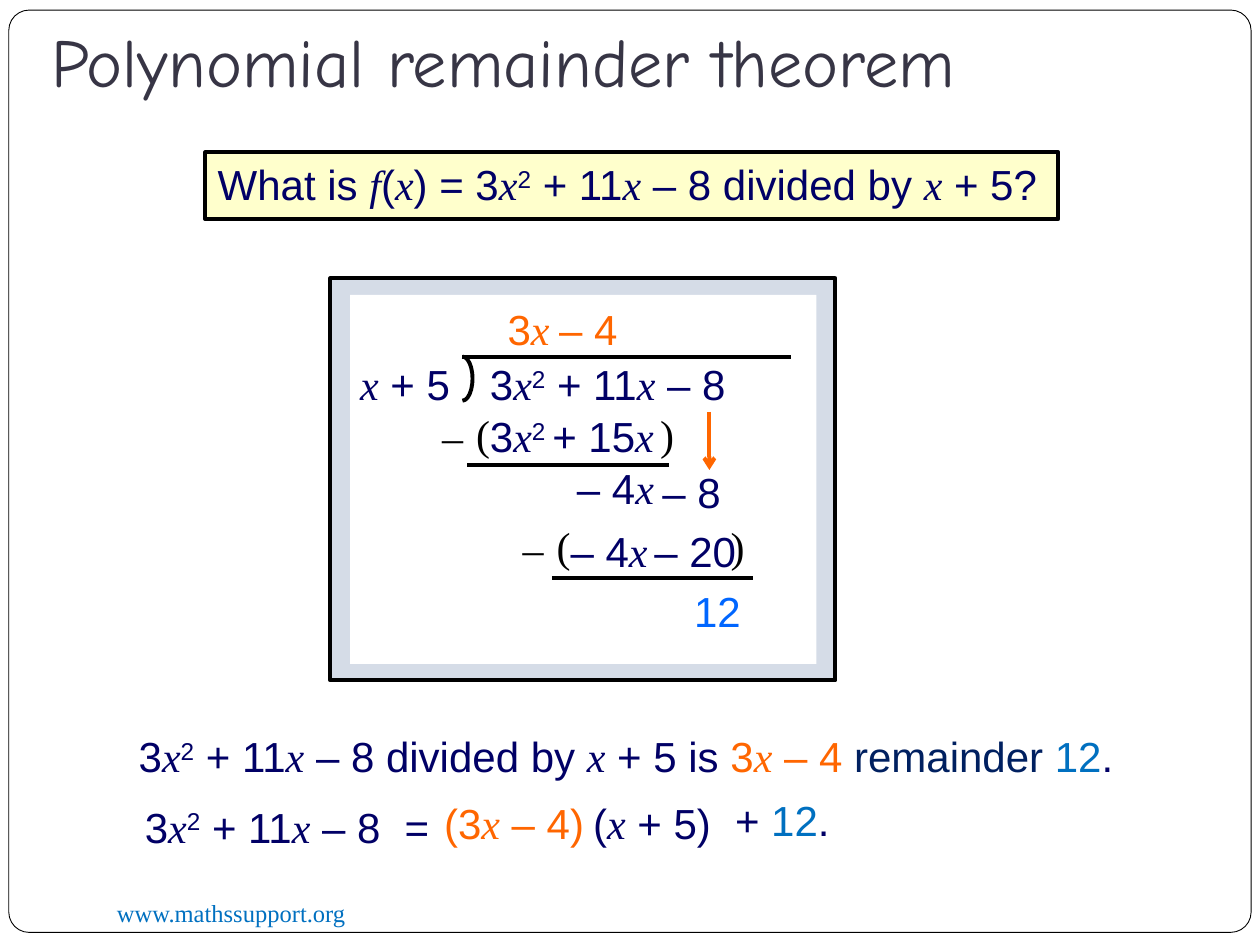
from dataclasses import dataclass
from itertools import groupby

from lxml import etree
from pptx import Presentation
from pptx.dml.color import RGBColor
from pptx.enum.shapes import MSO_CONNECTOR, MSO_SHAPE
from pptx.enum.text import MSO_ANCHOR, MSO_AUTO_SIZE, PP_ALIGN
from pptx.oxml.ns import qn
from pptx.util import Inches, Pt

STRAIGHT = MSO_CONNECTOR.STRAIGHT
RECT = MSO_SHAPE.RECTANGLE
ROUND = MSO_SHAPE.ROUNDED_RECTANGLE
BRACKET = MSO_SHAPE.RIGHT_BRACKET
TOP, BOTTOM = MSO_ANCHOR.TOP, MSO_ANCHOR.BOTTOM
LEFT, CENTER = PP_ALIGN.LEFT, PP_ALIGN.CENTER
GROW, FIXED = MSO_AUTO_SIZE.SHAPE_TO_FIT_TEXT, MSO_AUTO_SIZE.NONE


@dataclass(frozen=True)
class Theme:
    navy: str = "010066"
    orange: str = "FF6600"
    blue: str = "0066FF"
    sky: str = "0070C0"
    dark: str = "002060"
    slate: str = "373545"
    black: str = "000000"
    white: str = "FFFFFF"
    cream: str = "FFFFCC"
    frame: str = "D5DCE7"
    sans: str = "Arial"
    serif: str = "Times New Roman"
    hand: str = "Comic Neue"
    body: float = 24
    title: float = 39
    footer: float = 14
    rule: float = 2.25
    hairline: float = 0.5


class Builder:
    def __init__(self, slide, theme):
        self.s = slide
        self.t = theme

    def shape(self, kind, x, y, w, h, fill=None, line=None, width=None, adj=None):
        sp = self.s.shapes.add_shape(kind, Inches(x), Inches(y), Inches(w), Inches(h))
        sp.shadow.inherit = False
        if adj is not None:
            sp.adjustments[0] = adj
        if fill:
            sp.fill.solid()
            sp.fill.fore_color.rgb = RGBColor.from_string(fill)
        else:
            sp.fill.background()
        if line:
            sp.line.color.rgb = RGBColor.from_string(line)
            sp.line.width = Pt(width or self.t.rule)
        else:
            sp.line.fill.background()
        return sp

    def line(self, x1, y1, x2, y2, color, arrow=False):
        c = self.s.shapes.add_connector(STRAIGHT, Inches(x1), Inches(y1), Inches(x2), Inches(y2))
        c.line.color.rgb = RGBColor.from_string(color)
        c.line.width = Pt(self.t.rule)
        if arrow:
            etree.SubElement(c.line._get_or_add_ln(), qn("a:tailEnd"), type="arrow")
        etree.SubElement(c._element.spPr, qn("a:effectLst"))

    def run(self, p, text, font, size, color):
        r = p.add_run()
        r.text = text
        r.font.name = font
        r.font.size = Pt(size)
        r.font.color.rgb = RGBColor.from_string(color)
        return r

    def box(self, x, y, w, h):
        return self.s.shapes.add_textbox(Inches(x), Inches(y), Inches(w), Inches(h))

    def text(self, x, y, w, h, text, font, size, color, wrap=False):
        tf = self.box(x, y, w, h).text_frame
        tf.word_wrap = wrap
        tf.auto_size = GROW
        self.run(tf.paragraphs[0], text, font, size, color)
        return tf

    def math(self, sp, *parts, align=LEFT):
        """Variables x and f are italic; carets enclose superscripts."""
        tf = sp.text_frame
        tf.word_wrap = False
        tf.auto_size = GROW
        tf.vertical_anchor = TOP
        p = tf.paragraphs[0]
        p.alignment = align
        for text, color in parts:
            for i, piece in enumerate(text.split("^")):
                for variable, chars in groupby(piece, lambda ch: ch in "xf"):
                    font = self.t.serif if variable else self.t.sans
                    r = self.run(p, "".join(chars), font, self.t.body, color)
                    r.font.italic = variable
                    if i % 2:
                        r.font._element.set("baseline", "30000")


def main():
    prs = Presentation()
    prs.slide_width, prs.slide_height = Inches(10), Inches(7.5)
    t = Theme()
    b = Builder(prs.slides.add_slide(prs.slide_layouts[6]), t)

    b.shape(ROUND, 0.07, 0.08, 9.86, 7.32, t.white, t.black, t.hairline, 0.022)
    b.text(0.83, 7.08, 3.25, 0.34, "www.mathssupport.org", t.serif, t.footer, t.sky, True)
    tf = b.text(0.31, 0.25, 8.5, 0.65, "Polynomial remainder theorem", t.hand, t.title, t.slate, True)
    tf.auto_size = FIXED
    tf.vertical_anchor = BOTTOM
    tf.margin_bottom = Inches(0.1)

    question = b.shape(RECT, 1.63, 1.21, 6.77, 0.53, t.cream, t.black)
    b.math(question, ("What is f(x) = 3x^2^ + 11x – 8 divided by x + 5?", t.navy))

    b.shape(RECT, 2.62, 2.21, 4.01, 3.19, t.frame, t.black)
    b.shape(RECT, 2.78, 2.34, 3.7, 2.93, t.white)
    b.shape(BRACKET, 3.67, 2.83, 0.08, 0.35, line=t.black, adj=2.707)

    for x1, y, x2 in ((3.67, 2.83, 6.28), (3.71, 3.69, 5.31), (4.38, 4.59, 5.98)):
        b.line(x1, y, x2, y, t.black)
    b.line(5.63, 3.27, 5.63, 3.73, t.orange, arrow=True)

    division = (
        (3.79, 2.8, 2.2, "3x^2^ + 11x – 8", t.navy),
        (2.76, 2.8, 0.92, "x + 5", t.navy),
        (3.79, 3.21, 1.54, "3x^2 ^+ 15x", t.navy),
        (4.48, 3.62, 0.82, "– 4x", t.navy),
        (5.16, 3.65, 0.67, "– 8", t.navy),
        (3.93, 2.36, 0.54, "3x", t.orange),
        (4.34, 2.36, 0.66, "– 4", t.orange),
        (4.43, 4.12, 1.6, "– 4x^ ^– 20", t.navy),
        (5.41, 4.6, 0.58, "12", t.blue),
    )
    for x, y, w, text, color in division:
        b.math(b.box(x, y, w, 0.5), (text, color))

    for y, minus, left, right in ((3.19, 3.41, 3.68, 5.14), (4.08, 4.05, 4.32, 5.7)):
        for x, dy, w, mark in ((minus, 0.02, 0.35, "–"), (left, 0, 0.32, "("), (right, 0, 0.32, ")")):
            b.text(x, y + dy, w, 0.5, mark, t.serif, t.body, t.black)

    results = (
        (0.98, 5.75, 8.07, (("3x^2^ + 11x – 8 divided by x + 5 is ", t.navy), ("3x – 4 ", t.orange),
                            ("remainder ", t.dark), ("12", t.sky), (". ", t.navy))),
        (1.03, 6.31, 2.11, (("3x^2^ + 11x – 8", t.navy),)),
        (3.11, 6.31, 0.4, (("=", t.navy),)),
        (3.42, 6.28, 1.32, (("(3x – 4)", t.orange),)),
        (4.6, 6.28, 1.15, (("(x + 5)", t.navy),)),
        (5.73, 6.26, 1.05, (("+ ", t.navy), ("12", t.sky), (". ", t.navy))),
    )
    for x, y, w, parts in results:
        b.math(b.box(x, y, w, 0.5), *parts, align=CENTER)

    prs.save("out.pptx")


if __name__ == "__main__":
    main()
